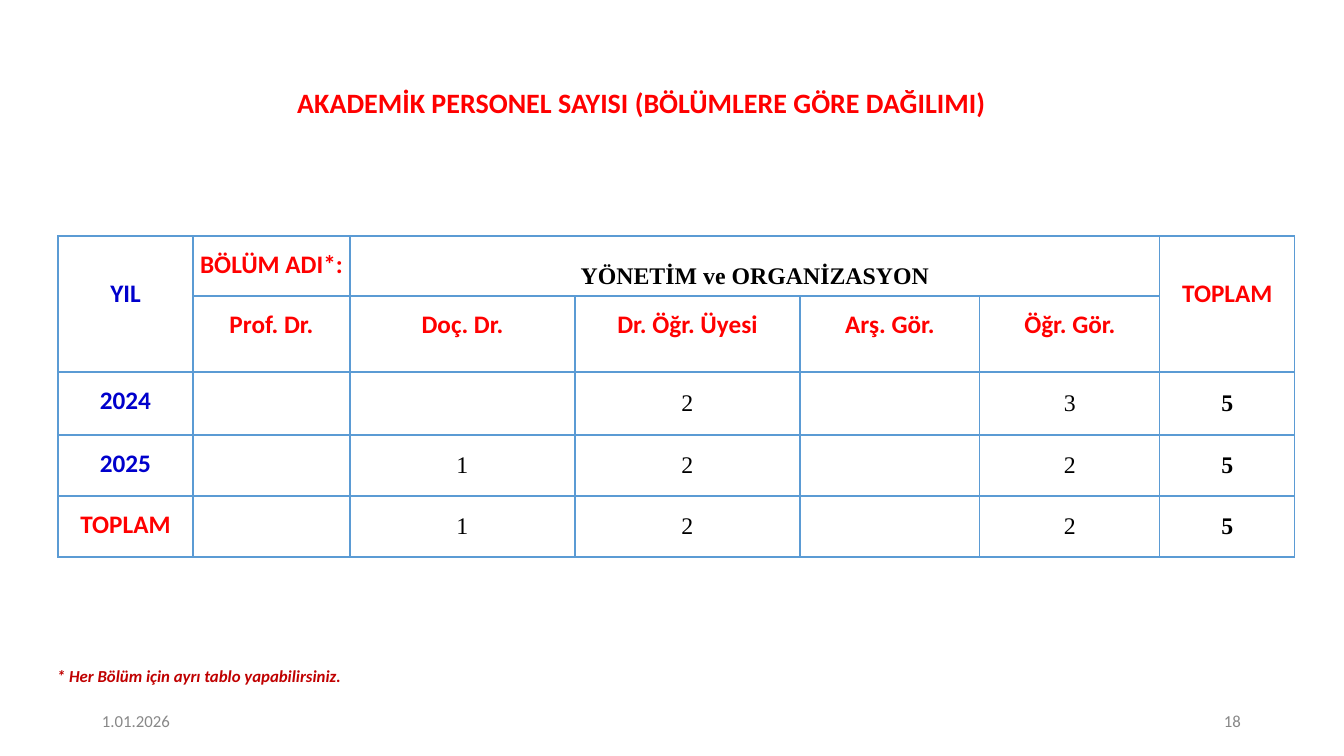
import pptx
import pptx.dml.color
import pptx.enum.text
import pptx.oxml
import pptx.util

PAGE = (1344, 756)
SCALE = 12192000 / 1344
RED, BLUE, BLACK, GREY, WINE, EDGE = (
    "FF0000", "0000CC", "000000", "888888", "C00000", "5B9BD4")

TITLE = "AKADEMİK PERSONEL SAYISI (BÖLÜMLERE GÖRE DAĞILIMI)"
NOTE = "* Her Bölüm için ayrı tablo yapabilirsiniz."
DATE = "1.01.2026"
NUMBER = "18"

ROWS = [
    ["YIL", "BÖLÜM ADI*:", "YÖNETİM ve ORGANİZASYON", "", "", "", "TOPLAM"],
    ["", "Prof. Dr.", "Doç. Dr.", "Dr. Öğr. Üyesi", "Arş. Gör.", "Öğr. Gör.", ""],
    ["2024", "", "", "2", "", "3", "5"],
    ["2025", "", "1", "2", "", "2", "5"],
    ["TOPLAM", "", "1", "2", "", "2", "5"],
]
MERGES = [((0, 0), (1, 0)), ((0, 2), (0, 5)), ((0, 6), (1, 6))]
WIDTHS = [135, 157, 225, 225, 180, 180, 135]
HEIGHTS = [60, 76, 63, 61, 61]
TABLE_AT = (58, 236)
TALL_TOP, GROUP_TOP, LABEL_TOP = 43, 27, 14

ALIGN = pptx.enum.text.PP_ALIGN
ANCHOR = pptx.enum.text.MSO_ANCHOR


def px(count):
    return pptx.util.Emu(round(count * SCALE))


def tint(code):
    return pptx.dml.color.RGBColor.from_string(code)


def write(frame, text, size=18, color=RED, font="Calibri", bold=True,
          italic=False, align=ALIGN.CENTER):
    line = frame.paragraphs[0]
    line.alignment = align
    run = line.add_run()
    run.text = text
    run.font.size = pptx.util.Pt(size)
    run.font.name = font
    run.font.bold = bold
    run.font.italic = italic
    run.font.color.rgb = tint(color)


def inset(item, left=0, top=0):
    """Set the left and top margins of a cell or text frame, the others to zero."""
    item.margin_left, item.margin_top = px(left), px(top)
    item.margin_right = item.margin_bottom = 0


def place(shape, box):
    shape.left, shape.top, shape.width, shape.height = map(px, box)


def label(slide, box, text, **style):
    frame = slide.shapes.add_textbox(*map(px, box)).text_frame
    frame.word_wrap = True
    inset(frame)
    write(frame, text, align=ALIGN.LEFT, **style)


def edge(cell):
    """Draw the four borders of a cell and leave it unfilled."""
    props = cell._tc.get_or_add_tcPr()
    for side in ("lnL", "lnR", "lnT", "lnB"):
        props.append(pptx.oxml.parse_xml(
            f'<a:{side} xmlns:a="http://schemas.openxmlformats.org/drawingml/2006/main"'
            f' w="12700"><a:solidFill><a:srgbClr val="{EDGE}"/></a:solidFill></a:{side}>'))
    cell.fill.background()


def format_cell(cell, row, col, text):
    """Style a cell by its role: heading, year label or count."""
    edge(cell)
    if not text:
        return
    last = len(WIDTHS) - 1
    if row > 1 and col > 0:
        inset(cell)
        cell.vertical_anchor = ANCHOR.MIDDLE
        write(cell.text_frame, text, size=17, color=BLACK,
              font="Times New Roman", bold=col == last)
    elif (row, col) == (0, 2):
        inset(cell, top=GROUP_TOP)
        write(cell.text_frame, text, size=17, color=BLACK, font="Times New Roman")
    else:
        tall = row == 0 and col in (0, last)
        inset(cell, top=TALL_TOP if tall else LABEL_TOP)
        year = col == 0 and text != "TOPLAM"
        write(cell.text_frame, text, color=BLUE if year else RED)


def add_staff(slide):
    table = slide.shapes.add_table(
        len(ROWS), len(WIDTHS), *map(px, TABLE_AT),
        px(sum(WIDTHS)), px(sum(HEIGHTS))).table
    table.first_row = table.horz_banding = False
    for column, width in zip(table.columns, WIDTHS):
        column.width = px(width)
    for line, height in zip(table.rows, HEIGHTS):
        line.height = px(height)
    for first, last in MERGES:
        table.cell(*first).merge(table.cell(*last))
    for row, texts in enumerate(ROWS):
        for col, text in enumerate(texts):
            format_cell(table.cell(row, col), row, col, text)


def main():
    deck = pptx.Presentation()
    deck.slide_width, deck.slide_height = map(px, PAGE)
    slide = deck.slides.add_slide(deck.slide_layouts[5])

    title = slide.shapes.title
    place(title, (36, 66, 1151, 52))
    frame = title.text_frame
    frame.auto_size = pptx.enum.text.MSO_AUTO_SIZE.NONE
    frame.vertical_anchor = ANCHOR.TOP
    inset(frame, left=60, top=19)
    write(frame, TITLE, size=20)

    add_staff(slide)
    label(slide, (57, 666, 290, 22), NOTE, size=12, color=WINE, italic=True)
    label(slide, (102, 711, 72, 20), DATE, size=12, color=GREY, bold=False)
    label(slide, (1224, 711, 27, 20), NUMBER, size=12, color=GREY, bold=False)
    deck.save("out.pptx")


if __name__ == "__main__":
    main()
